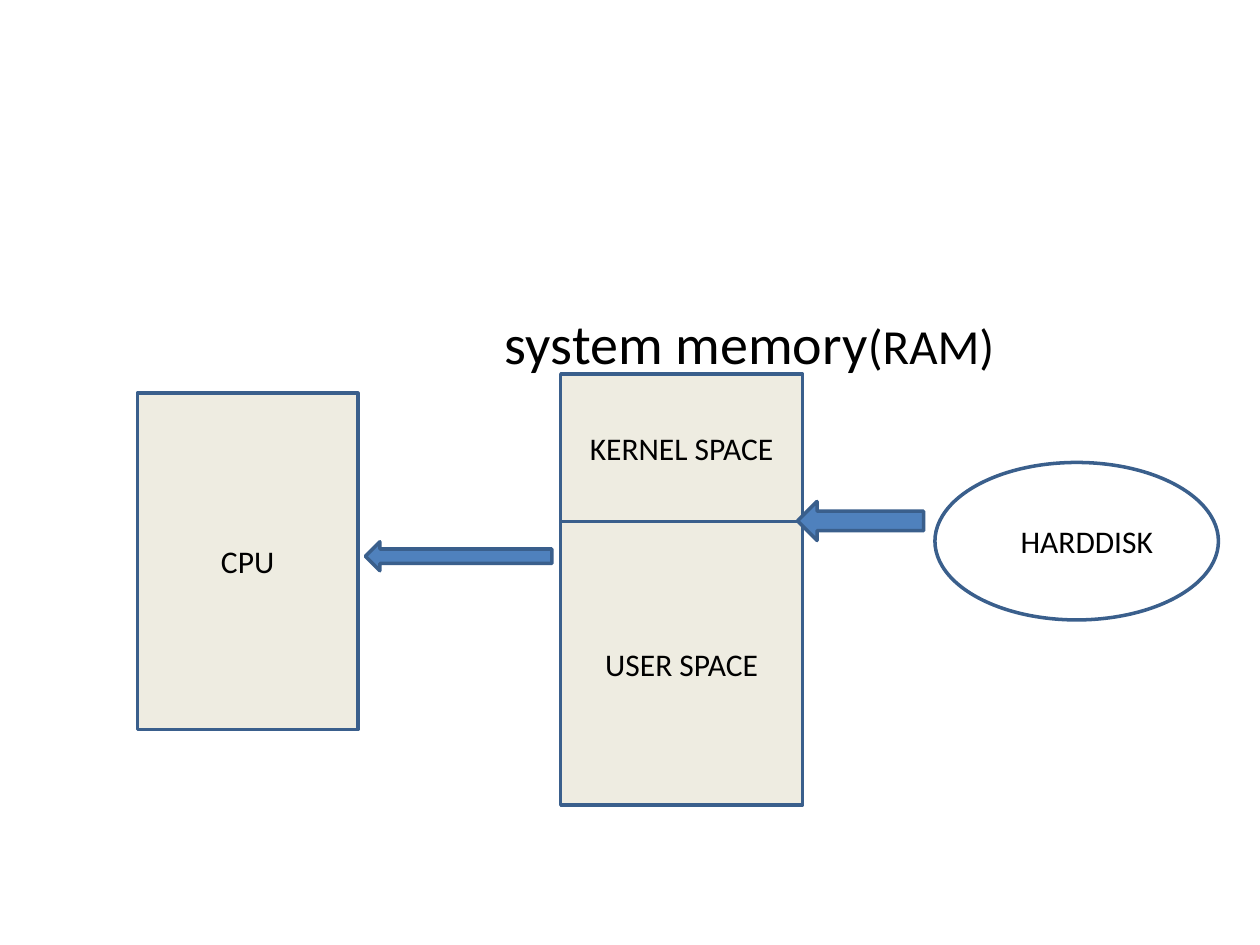
"""Build a slide showing data flow from hard disk through system memory to CPU."""
from dataclasses import dataclass

from pptx import Presentation
from pptx.dml.color import RGBColor
from pptx.enum.shapes import MSO_SHAPE
from pptx.enum.text import MSO_ANCHOR, PP_ALIGN
from pptx.util import Inches, Pt

RECTANGLE = MSO_SHAPE.RECTANGLE
OVAL = MSO_SHAPE.OVAL
LEFT_ARROW = MSO_SHAPE.LEFT_ARROW
MIDDLE = MSO_ANCHOR.MIDDLE
CENTER = PP_ALIGN.CENTER


@dataclass(frozen=True)
class Theme:
    font: str = "Calibri"
    text: str = "000000"
    outline: str = "3A5F8C"
    block: str = "EEECE1"
    disk: str = "FFFFFF"
    arrow: str = "4F81BD"
    heading_size: int = 32
    detail_size: int = 28
    label_size: int = 18
    line_width: int = 2


@dataclass(frozen=True)
class Node:
    left: float
    top: float
    width: float
    height: float
    fill: str
    kind: MSO_SHAPE = RECTANGLE
    label: str = ""
    left_inset: float = 0.1


THEME = Theme()
MEMORY_LEFT, MEMORY_WIDTH = 4.45, 1.92
KERNEL_TOP, KERNEL_HEIGHT = 2.97, 1.17
USER_TOP = KERNEL_TOP + KERNEL_HEIGHT

NODES = (
    Node(1.09, 3.12, 1.75, 2.67, THEME.block, label="CPU"),
    Node(MEMORY_LEFT, USER_TOP, MEMORY_WIDTH, 2.25, THEME.block, label="USER SPACE"),
    Node(7.42, 3.67, 2.25, 1.25, THEME.disk, OVAL, "HARDDISK", 0.26),
    Node(MEMORY_LEFT, KERNEL_TOP, MEMORY_WIDTH, KERNEL_HEIGHT, THEME.block, label="KERNEL SPACE"),
    Node(2.9, 4.3, 1.48, 0.23, THEME.arrow, LEFT_ARROW),
    Node(6.33, 3.98, 1, 0.31, THEME.arrow, LEFT_ARROW),
)


def add_run(paragraph, text: str, size: int) -> None:
    run = paragraph.add_run()
    run.text = text
    formats = {"name": THEME.font, "size": Pt(size)}
    for name, value in formats.items():
        setattr(run.font, name, value)
    run.font.color.rgb = RGBColor.from_string(THEME.text)


def add_node(slide, node: Node) -> None:
    bounds = (Inches(value) for value in (node.left, node.top, node.width, node.height))
    shape = slide.shapes.add_shape(node.kind, *bounds)
    shape.shadow.inherit = False
    shape.fill.solid()
    shape.fill.fore_color.rgb = RGBColor.from_string(node.fill)
    shape.line.color.rgb = RGBColor.from_string(THEME.outline)
    shape.line.width = Pt(THEME.line_width)
    if node.label:
        frame = shape.text_frame
        formats = {
            "word_wrap": True,
            "vertical_anchor": MIDDLE,
            "margin_left": Inches(node.left_inset),
        }
        for name, value in formats.items():
            setattr(frame, name, value)
        paragraph = frame.paragraphs[0]
        paragraph.alignment = CENTER
        add_run(paragraph, node.label, THEME.label_size)


def add_heading(slide) -> None:
    heading = slide.shapes.add_textbox(Inches(3.91), Inches(2.4), Inches(4.3), Inches(0.64))
    heading.text_frame.word_wrap = True
    paragraph = heading.text_frame.paragraphs[0]
    add_run(paragraph, "system memory", THEME.heading_size)
    add_run(paragraph, "(RAM)", THEME.detail_size)


def main() -> None:
    presentation = Presentation()
    presentation.slide_width = Inches(10)
    presentation.slide_height = Inches(7.5)
    slide = presentation.slides.add_slide(presentation.slide_layouts[6])
    add_heading(slide)
    for node in NODES:
        add_node(slide, node)
    presentation.save("out.pptx")


if __name__ == "__main__":
    main()
